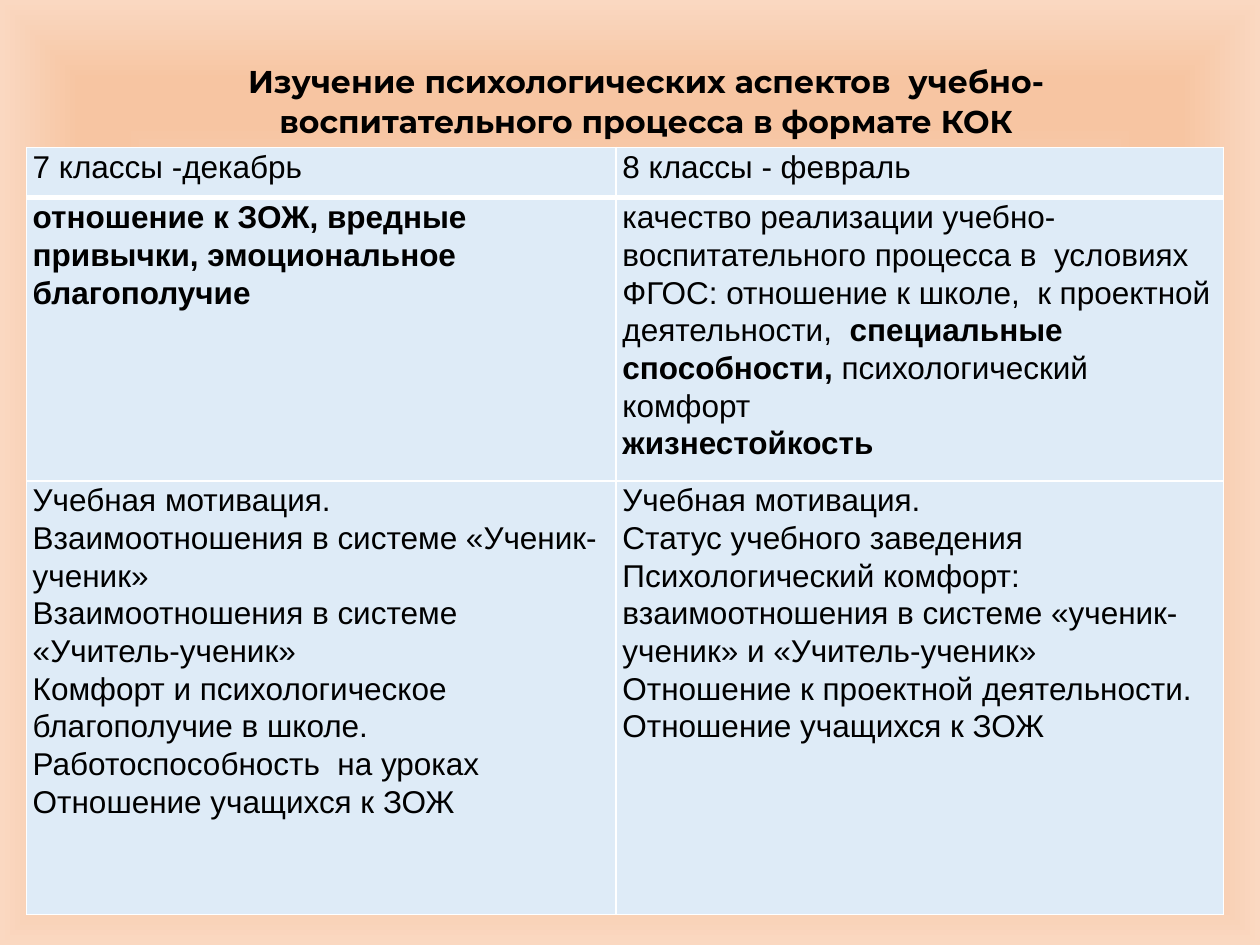
import lxml.etree
import pptx
import pptx.dml.color
import pptx.enum.text
import pptx.oxml
import pptx.oxml.ns
import pptx.util

Pt = pptx.util.Pt
RGBColor = pptx.dml.color.RGBColor
qn = pptx.oxml.ns.qn

BLACK = RGBColor(0x00, 0x00, 0x00)
WHITE = RGBColor(0xFF, 0xFF, 0xFF)
PALE_BLUE = RGBColor(0xDE, 0xEB, 0xF7)
CREAM = RGBColor(0xFE, 0xF8, 0xF5)
PEACH = RGBColor(0xF7, 0xC5, 0xA2)
LIGHT_PEACH = RGBColor(0xFA, 0xD8, 0xC1)

BACKGROUND_STOPS = [(0, CREAM), (74, PEACH), (83, PEACH), (100, LIGHT_PEACH)]
TITLE = "Изучение психологических аспектов  учебно-воспитательного процесса в формате КОК"
COLUMN_WIDTHS = [337, 347]
ROW_HEIGHTS = [28.8, 161.5, 248]
PROGRAMME = [
    [
        [[("7 классы -декабрь", False)]],
        [[("8 классы - февраль", False)]],
    ],
    [
        [[("отношение к ЗОЖ, вредные привычки, эмоциональное благополучие", True)]],
        [
            [
                ("качество реализации учебно-воспитательного процесса в  условиях ФГОС: "
                 "отношение к школе,  к проектной деятельности,  ", False),
                ("специальные способности, ", True),
                ("психологический комфорт", False),
            ],
            [("жизнестойкость", True)],
        ],
    ],
    [
        [
            [("Учебная мотивация.", False)],
            [("Взаимоотношения в системе «Ученик-ученик»", False)],
            [("Взаимоотношения в системе «Учитель-ученик»", False)],
            [("Комфорт и психологическое благополучие в школе.", False)],
            [("Работоспособность  на уроках", False)],
            [("Отношение учащихся к ЗОЖ", False)],
        ],
        [
            [("Учебная мотивация.", False)],
            [("Статус учебного заведения", False)],
            [("Психологический комфорт: взаимоотношения в системе «ученик-ученик» "
              "и «Учитель-ученик»", False)],
            [("Отношение к проектной деятельности.", False)],
            [("Отношение учащихся к ЗОЖ", False)],
        ],
    ],
]


def write_text(frame, paragraphs, font="Arial", size=18, color=BLACK, align=None):
    """Fill a text frame with paragraphs made of (text, bold) runs."""
    frame.word_wrap = True
    for index, runs in enumerate(paragraphs):
        paragraph = frame.add_paragraph() if index else frame.paragraphs[0]
        paragraph.line_spacing = 1.07
        paragraph.alignment = align
        for text, bold in runs:
            run = paragraph.add_run()
            run.text = text
            run.font.name = font
            run.font.size = Pt(size)
            run.font.bold = bold
            run.font.color.rgb = color


def paint_background(slide, stops):
    """Give the slide a gradient that follows its outline towards the centre."""
    slide.background.fill.solid()
    solid = next(slide.element.iter(qn("p:bgPr")))[0]
    stop_xml = "".join(
        f'<a:gs pos="{position * 1000}"><a:srgbClr val="{color}"/></a:gs>'
        for position, color in stops
    )
    gradient = pptx.oxml.parse_xml(
        f'<a:gradFill {pptx.oxml.ns.nsdecls("a")} rotWithShape="1">'
        f'<a:gsLst>{stop_xml}</a:gsLst><a:path path="shape">'
        '<a:fillToRect l="50000" t="50000" r="50000" b="50000"/></a:path></a:gradFill>'
    )
    solid.getparent().replace(solid, gradient)


def add_title(slide, left, top, width, height):
    """Place the centred heading in the given box."""
    heading = slide.shapes.add_textbox(Pt(left), Pt(top), Pt(width), Pt(height))
    write_text(heading.text_frame, [[(TITLE, True)]], font="Montserrat",
               align=pptx.enum.text.PP_ALIGN.CENTER)


def set_borders(cell, widths, color):
    """Draw the cell's borders with a width in points for each side."""
    properties = cell._tc.get_or_add_tcPr()
    for index, (side, width) in enumerate(widths.items()):
        border = lxml.etree.Element(qn(f"a:ln{side}"), w=str(Pt(width)))
        fill = lxml.etree.SubElement(border, qn("a:solidFill"))
        lxml.etree.SubElement(fill, qn("a:srgbClr"), val=str(color))
        properties.insert(index, border)


def add_programme(slide, left, top, width, height):
    """Place the table of study topics by class in the given box."""
    table = slide.shapes.add_table(len(PROGRAMME), len(COLUMN_WIDTHS), Pt(left), Pt(top),
                                   Pt(width), Pt(height)).table
    table.horz_banding = False
    for column, column_width in zip(table.columns, COLUMN_WIDTHS):
        column.width = Pt(column_width)
    for row_index, (topics, row_height) in enumerate(zip(PROGRAMME, ROW_HEIGHTS)):
        table.rows[row_index].height = Pt(row_height)
        for column_index, paragraphs in enumerate(topics):
            cell = table.cell(row_index, column_index)
            cell.margin_left = cell.margin_right = Pt(3.6)
            cell.margin_top = cell.margin_bottom = 0
            cell.fill.solid()
            cell.fill.fore_color.rgb = PALE_BLUE
            set_borders(cell, {"L": 1, "R": 1, "T": 3 if row_index == 1 else 1,
                               "B": 3 if row_index == 0 else 1}, WHITE)
            write_text(cell.text_frame, paragraphs)


def main():
    """Build the slide and save it."""
    deck = pptx.Presentation()
    deck.slide_width, deck.slide_height = Pt(720), Pt(540)
    slide = deck.slides.add_slide(deck.slide_layouts[6])
    paint_background(slide, BACKGROUND_STOPS)
    add_title(slide, 70.5, 30.2, 597.6, 54)
    add_programme(slide, 15.1, 84.2, sum(COLUMN_WIDTHS), sum(ROW_HEIGHTS))
    deck.save("out.pptx")


if __name__ == "__main__":
    main()
